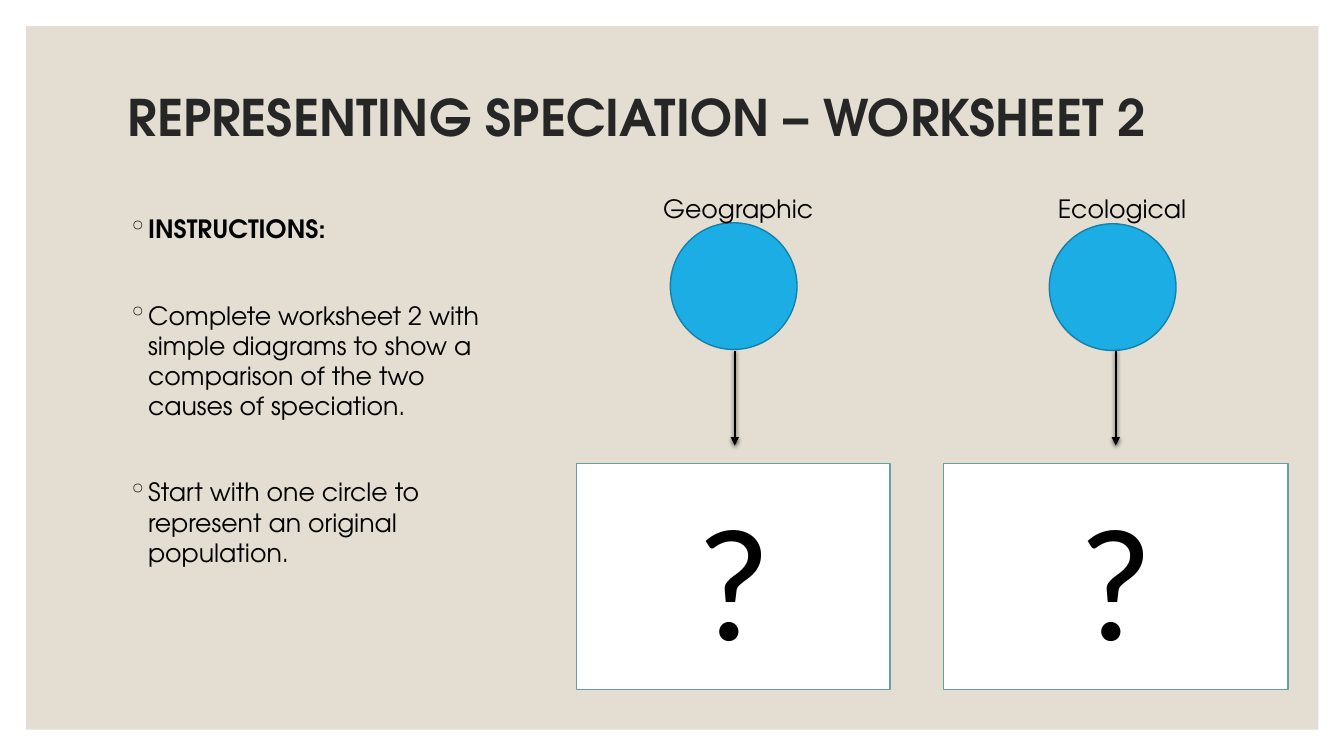
"""Build the speciation worksheet slide."""
from dataclasses import dataclass

from lxml.etree import SubElement
from pptx import Presentation
from pptx.dml.color import RGBColor
from pptx.enum.shapes import MSO_CONNECTOR, MSO_SHAPE
from pptx.enum.text import MSO_ANCHOR, PP_ALIGN
from pptx.oxml import parse_xml
from pptx.oxml.ns import nsdecls, qn
from pptx.util import Pt

HEADING_FONT = "TeX Gyre Adventor"
BLACK, CHARCOAL, WHITE = "000000", "262626", "FFFFFF"
ARROW_TOP, ARROW_BOTTOM = 250.56, 318.24
INSTRUCTIONS = [
    ("INSTRUCTIONS:", True),
    ("Complete worksheet 2 with simple diagrams to show a comparison "
     "of the two causes of speciation.", False),
    ("Start with one circle to represent an original population.", False),
]


@dataclass(frozen=True)
class Area:
    """A rectangle on the page, in points."""
    left: float
    top: float
    width: float
    height: float

    def lengths(self) -> list:
        """Return the four lengths that shape methods expect."""
        return [Pt(value) for value in (self.left, self.top, self.width, self.height)]


@dataclass(frozen=True)
class Cause:
    """One cause of speciation with its circle, arrow and answer box."""
    name: str
    label: Area
    circle: Area
    arrow_x: float
    answer: Area


CAUSES = [
    Cause("Geographic", Area(466.56, 134.64, 130, 28.8),
          Area(478.8, 159.12, 90.5, 90.5), 524.88, Area(411.84, 331.2, 223.92, 161.28)),
    Cause("Ecological", Area(748.5, 134.64, 130, 28.8),
          Area(749.52, 159.84, 90.5, 90.5), 797.04, Area(673.92, 331.2, 246.24, 161.28)),
]


def color(value: str) -> RGBColor:
    """Turn a hex string into a colour."""
    return RGBColor.from_string(value)


def apply(target, values: dict) -> None:
    """Set each named attribute on the target."""
    for name, value in values.items():
        setattr(target, name, value)


def add_span(para, text: str, size: float, font: str = HEADING_FONT,
             tint: str = BLACK, bold: bool = False) -> None:
    """Add a formatted run to a paragraph."""
    span = para.add_run()
    span.text = text
    apply(span.font, {"name": font, "size": Pt(size), "bold": bold})
    span.font.color.rgb = color(tint)


def add_box(page, area: Area, anchor=MSO_ANCHOR.TOP):
    """Add a wrapping text box and return its text frame."""
    frame = page.shapes.add_textbox(*area.lengths()).text_frame
    apply(frame, {"word_wrap": True, "vertical_anchor": anchor})
    return frame


def add_filled(page, kind, area: Area, fill: str, outline: str = ""):
    """Add a flat preset shape with an optional outline."""
    shape = page.shapes.add_shape(kind, *area.lengths())
    shape.shadow.inherit = False
    shape.fill.solid()
    shape.fill.fore_color.rgb = color(fill)
    if outline:
        shape.line.color.rgb = color(outline)
        shape.line.width = Pt(1)
    else:
        shape.line.fill.background()
    return shape


def add_bullet(para) -> None:
    """Give a paragraph a hanging ring bullet."""
    properties = para._p.get_or_add_pPr()
    for name, indent in {"marL": 14.4, "indent": -14.4}.items():
        properties.set(name, str(Pt(indent)))
    tint = SubElement(properties, qn("a:buClr"))
    SubElement(tint, qn("a:srgbClr"), val=CHARCOAL)
    SubElement(properties, qn("a:buChar"), char="◦")


def add_arrow(page, x: float) -> None:
    """Add a downward arrow with a soft shadow."""
    arrow = page.shapes.add_connector(
        MSO_CONNECTOR.STRAIGHT, Pt(x), Pt(ARROW_TOP), Pt(x), Pt(ARROW_BOTTOM))
    arrow.line.color.rgb = color(BLACK)
    arrow.line.width = Pt(1.5)
    properties = arrow._element.spPr
    SubElement(properties.find(qn("a:ln")), qn("a:tailEnd"), type="triangle")
    properties.append(parse_xml(
        f'<a:effectLst {nsdecls("a")}>'
        f'<a:outerShdw blurRad="{Pt(3)}" dist="{Pt(1)}" dir="5400000" rotWithShape="0">'
        f'<a:srgbClr val="{BLACK}"><a:alpha val="63000"/></a:srgbClr>'
        '</a:outerShdw></a:effectLst>'))


def add_instructions(page) -> None:
    """Add the bulleted instructions."""
    frame = add_box(page, Area(84.24, 149.04, 284.4, 319.68))
    for index, (text, bold) in enumerate(INSTRUCTIONS):
        para = frame.add_paragraph() if index else frame.paragraphs[0]
        para.space_after = Pt(40)
        add_bullet(para)
        add_span(para, text, 18, bold=bold)


def add_cause(page, cause: Cause) -> None:
    """Add the whole column for one cause."""
    add_filled(page, MSO_SHAPE.OVAL, cause.circle, "1CADE4", "1580A9")
    add_arrow(page, cause.arrow_x)
    answer = add_filled(page, MSO_SHAPE.RECTANGLE, cause.answer, WHITE, "62A39F")
    answer.text_frame.vertical_anchor = MSO_ANCHOR.MIDDLE
    para = answer.text_frame.paragraphs[0]
    para.alignment = PP_ALIGN.CENTER
    add_span(para, "?", 115, "Calibri")
    add_span(add_box(page, cause.label).paragraphs[0], cause.name, 18)


def main() -> None:
    """Build and save the deck."""
    deck = Presentation()
    apply(deck, {"slide_width": Pt(960), "slide_height": Pt(540)})
    page = deck.slides.add_slide(deck.slide_layouts[6])
    add_filled(page, MSO_SHAPE.RECTANGLE, Area(18.72, 18.72, 923.04, 502.56), "E3DED1")
    title = add_box(page, Area(84.24, 50.4, 792, 70.56), MSO_ANCHOR.MIDDLE).paragraphs[0]
    title.line_spacing = 0.9
    add_span(title, "REPRESENTING SPECIATION – WORKSHEET 2", 36, tint=CHARCOAL, bold=True)
    add_instructions(page)
    for cause in CAUSES:
        add_cause(page, cause)
    deck.save("out.pptx")


if __name__ == "__main__":
    main()
